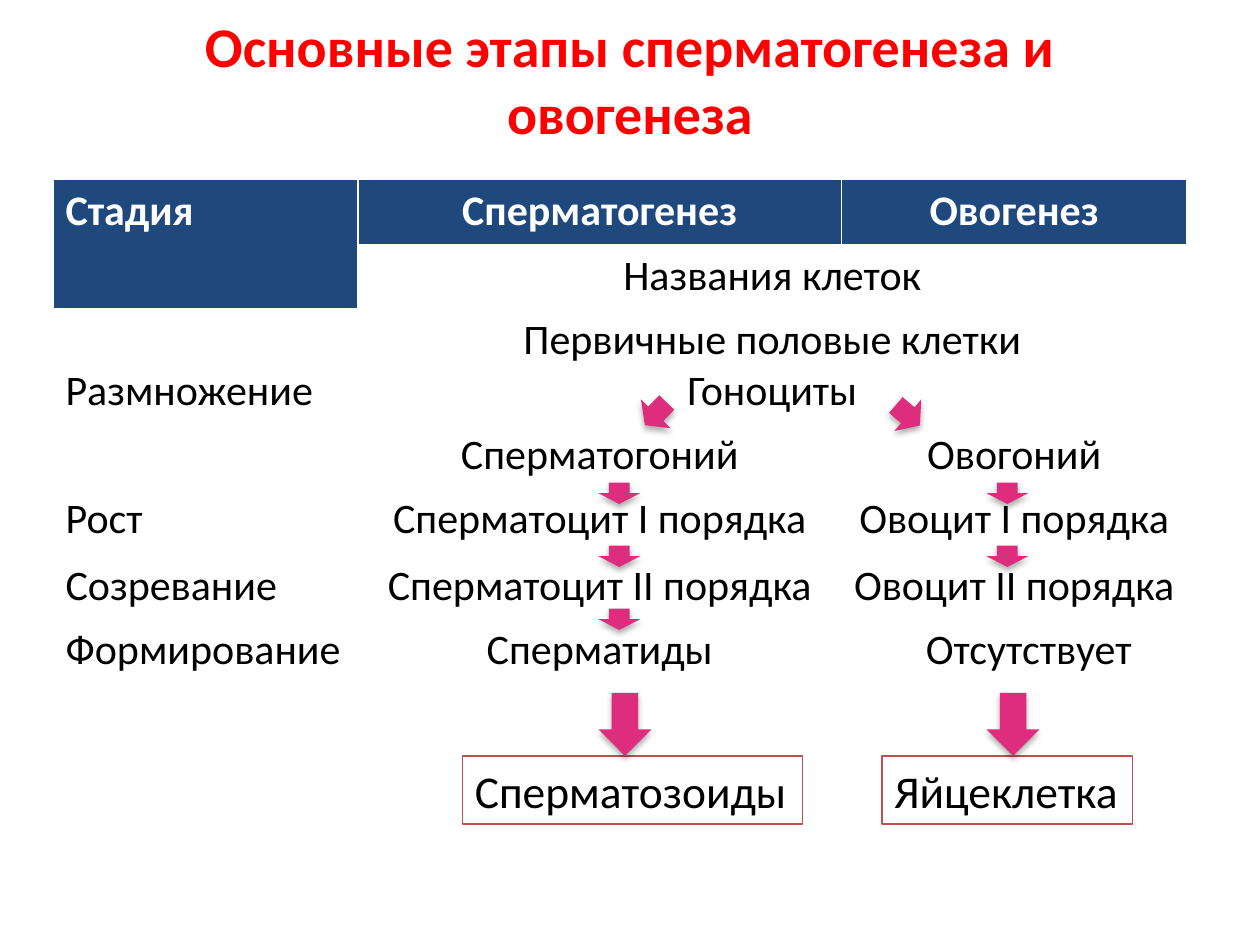
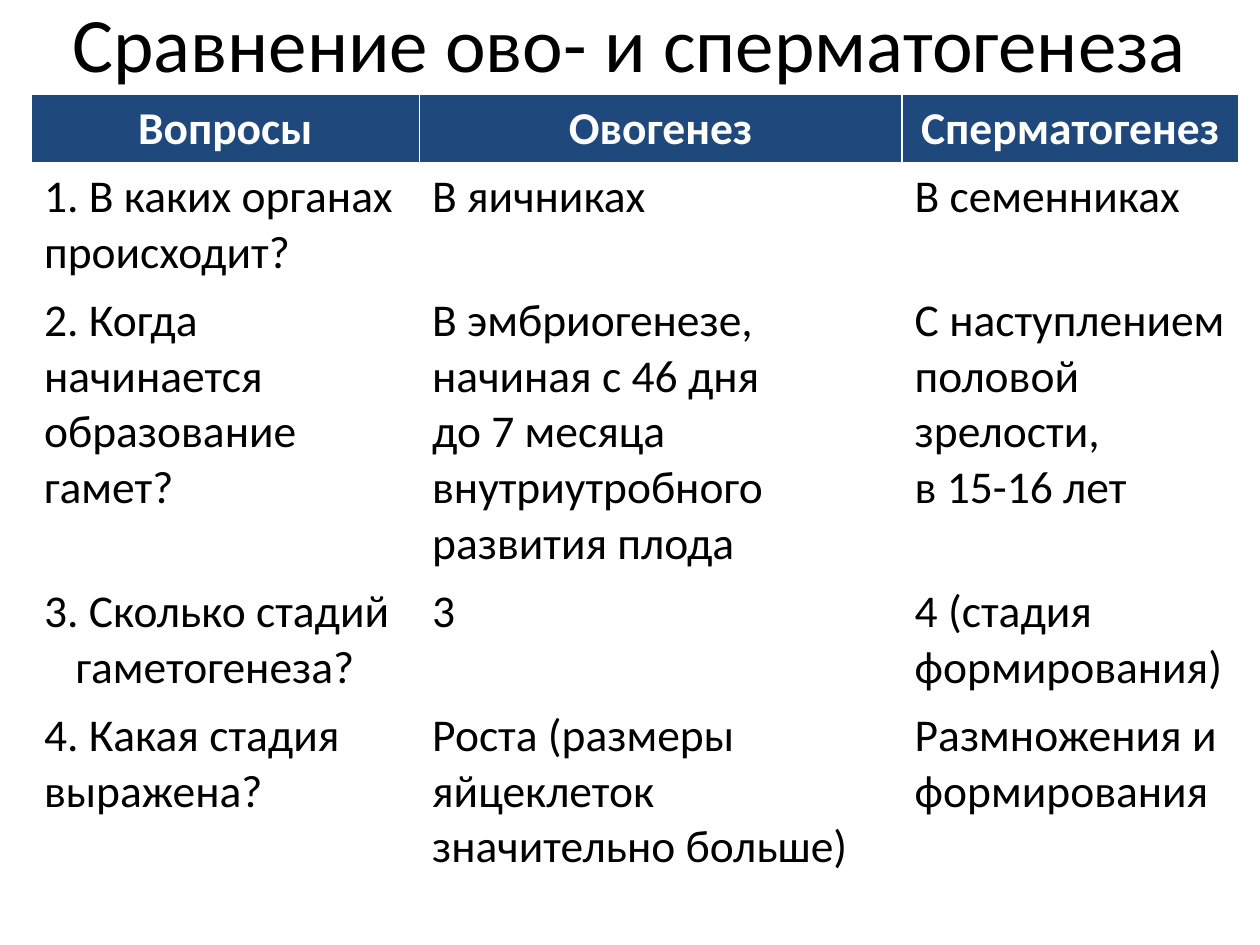
from lxml import etree
from pptx import Presentation
from pptx.dml.color import RGBColor
from pptx.enum.shapes import MSO_SHAPE as Shape
from pptx.enum.text import MSO_ANCHOR as Anchor, MSO_AUTO_SIZE as AutoSize, PP_ALIGN as Align
from pptx.oxml import parse_xml
from pptx.oxml.ns import nsdecls, qn
from pptx.util import Inches, Pt

NAVY, WHITE, BLACK = "1F497D", "FFFFFF", "000000"
RED, PINK, BRICK = "FF0000", "DF2D7E", "C0504D"
SHADOW = (
    f'<a:effectLst {nsdecls("a")}><a:outerShdw blurRad="44450" dist="27940" dir="5400000" '
    'rotWithShape="0"><a:srgbClr val="000000"><a:alpha val="32000"/></a:srgbClr>'
    '</a:outerShdw></a:effectLst>'
)


def paint(fill, color):
    fill.solid()
    fill.fore_color.rgb = RGBColor.from_string(color)


def format_text(text_frame, color, alignment, size, bold=False):
    values = {"name": "Calibri", "size": Pt(size), "bold": bold}
    for paragraph in text_frame.paragraphs:
        paragraph.alignment = alignment
        for name, value in values.items():
            setattr(paragraph.font, name, value)
        paint(paragraph.font.fill, color)


presentation = Presentation()
presentation.slide_width, presentation.slide_height = Inches(10), Inches(7.5)

# Content of both slides; None marks a cell covered by a merge
stages = {
    "title": "Основные этапы сперматогенеза и овогенеза",
    "title_box": (0.5, 0, 9, 1.25),
    "title_margin": 0.4,
    "title_format": {"color": RED, "size": 32, "bold": True},
    "table_at": (0.42, 1.42),
    "columns": [2.42, 3.84, 2.74],
    "heights": [0.52, 0.4, 0.85, 0.47, 0.53, 0.47, 0.55],
    "size": 24,
    "opacity": 100,
    "merges": [(0, 0, 1, 0), (1, 1, 1, 2), (2, 0, 3, 0), (2, 1, 2, 2)],
    "centred": lambda row, column: column > 0,
    "rows": [
        ["Стадия", "Сперматогенез", "Овогенез"],
        [None, "Названия клеток", None],
        ["Размножение", "Первичные половые клетки\nГоноциты", None],
        [None, "Сперматогоний", "Овогоний"],
        ["Рост", "Сперматоцит I порядка", "Овоцит I порядка"],
        ["Созревание", "Сперматоцит II порядка", "Овоцит II порядка"],
        ["Формирование", "Сперматиды", "Отсутствует"],
    ],
}
comparison = {
    "title": "Сравнение ово- и сперматогенеза",
    "title_box": (0, -0.17, 10, 1),
    "title_margin": 0.1,
    "title_format": {"color": BLACK, "size": 44},
    "table_at": (0.25, 0.75),
    "columns": [3.08, 3.83, 2.67],
    "heights": [0.52, 0.88, 1.33, 0.97, 1.96],
    "size": 26,
    "opacity": 68,
    "merges": [],
    "centred": lambda row, column: row == 0,
    "rows": [
        ["Вопросы", "Овогенез", "Сперматогенез"],
        ["1. В каких органах происходит?", "В яичниках", "В семенниках"],
        ["2. Когда начинается образование гамет?",
         "В эмбриогенезе, начиная с 46 дня\nдо 7 месяца внутриутробного развития плода",
         "С наступлением половой зрелости,\nв 15-16 лет"],
        ["3. Сколько стадий гаметогенеза?", "3", "4 (стадия формирования)"],
        ["4. Какая стадия выражена?", "Роста (размеры яйцеклеток значительно больше)",
         "Размножения и формирования"],
    ],
}

# Titles and tables
slides, tables = [], []
for content in (stages, comparison):
    slide = presentation.slides.add_slide(presentation.slide_layouts[5])
    title = slide.shapes.title
    title.left, title.top, title.width, title.height = map(Inches, content["title_box"])
    title.text_frame.text = content["title"]
    title_values = {
        "auto_size": AutoSize.NONE,
        "vertical_anchor": Anchor.MIDDLE,
        "margin_left": Inches(content["title_margin"]),
        "margin_right": Inches(content["title_margin"]),
    }
    for name, value in title_values.items():
        setattr(title.text_frame, name, value)
    format_text(title.text_frame, alignment=Align.CENTER, **content["title_format"])

    columns, heights = content["columns"], content["heights"]
    box = (*content["table_at"], sum(columns), sum(heights))
    table = slide.shapes.add_table(len(heights), len(columns), *map(Inches, box)).table
    for column, width in zip(table.columns, columns):
        column.width = Inches(width)
    for row, height in zip(table.rows, heights):
        row.height = Inches(height)
    for top, left, bottom, right in content["merges"]:
        table.cell(top, left).merge(table.cell(bottom, right))

    for row, texts in enumerate(content["rows"]):
        header = row == 0
        for column, text in enumerate(texts):
            cell = table.cell(row, column)
            paint(cell.fill, NAVY if header else WHITE)
            if not header and content["opacity"] < 100:
                color = cell._tc.tcPr.find(".//" + qn("a:srgbClr"))
                etree.SubElement(color, qn("a:alpha"), val=str(content["opacity"] * 1000))
            if text is None:
                continue
            cell.text = text
            alignment = Align.CENTER if content["centred"](row, column) else Align.LEFT
            format_text(cell.text_frame, WHITE if header else BLACK, alignment,
                        content["size"], header)
    slides.append(slide)
    tables.append(table)

# Cells with their own placement
reproduction = tables[0].cell(2, 0)
reproduction.vertical_anchor = Anchor.MIDDLE
reproduction.margin_bottom = Inches(0.16)
second_oocyte = tables[0].cell(5, 2)
second_oocyte.margin_left = second_oocyte.margin_right = Inches(0.05)
tables[0].cell(6, 2).margin_left = Inches(0.33)
question = tables[1].cell(3, 0).text_frame.paragraphs[0]._p.get_or_add_pPr()
question.set("marL", str(Inches(0.25)))
question.set("indent", str(-Inches(0.25)))

# Resulting cells
shapes = slides[0].shapes
for text, left, width in (("Сперматозоиды", 3.67, 2.7), ("Яйцеклетка", 7, 1.99)):
    result = shapes.add_shape(Shape.RECTANGLE, *map(Inches, (left, 6, width, 0.54)))
    result.shadow.inherit = False
    paint(result.fill, WHITE)
    paint(result.line.fill, BRICK)
    result.line.width = Pt(0.75)
    result.text_frame.text = text
    result.text_frame.word_wrap = False
    result.text_frame.auto_size = AutoSize.SHAPE_TO_FIT_TEXT
    format_text(result.text_frame, BLACK, Align.LEFT, 26)

# Arrows: left, top, width, height, rotation
sperm_x, egg_x = 4.75, 7.83
arrows = [(left, 5.5, 0.42, 0.5, 0) for left in (sperm_x, egg_x)]
arrows += [(5.04, 3.16, 0.33, 0.25, 44), (7.04, 3.17, 0.33, 0.25, 310.5)]
for left, count in ((sperm_x, 3), (egg_x, 2)):
    arrows += [(left, 3.83 + 0.5 * step, 0.33, 0.17, 0) for step in range(count)]
for *box, rotation in arrows:
    arrow = shapes.add_shape(Shape.DOWN_ARROW, *map(Inches, box))
    arrow.rotation = rotation
    paint(arrow.fill, PINK)
    arrow.line.fill.background()
    arrow._element.spPr.append(parse_xml(SHADOW))

presentation.save("out.pptx")
